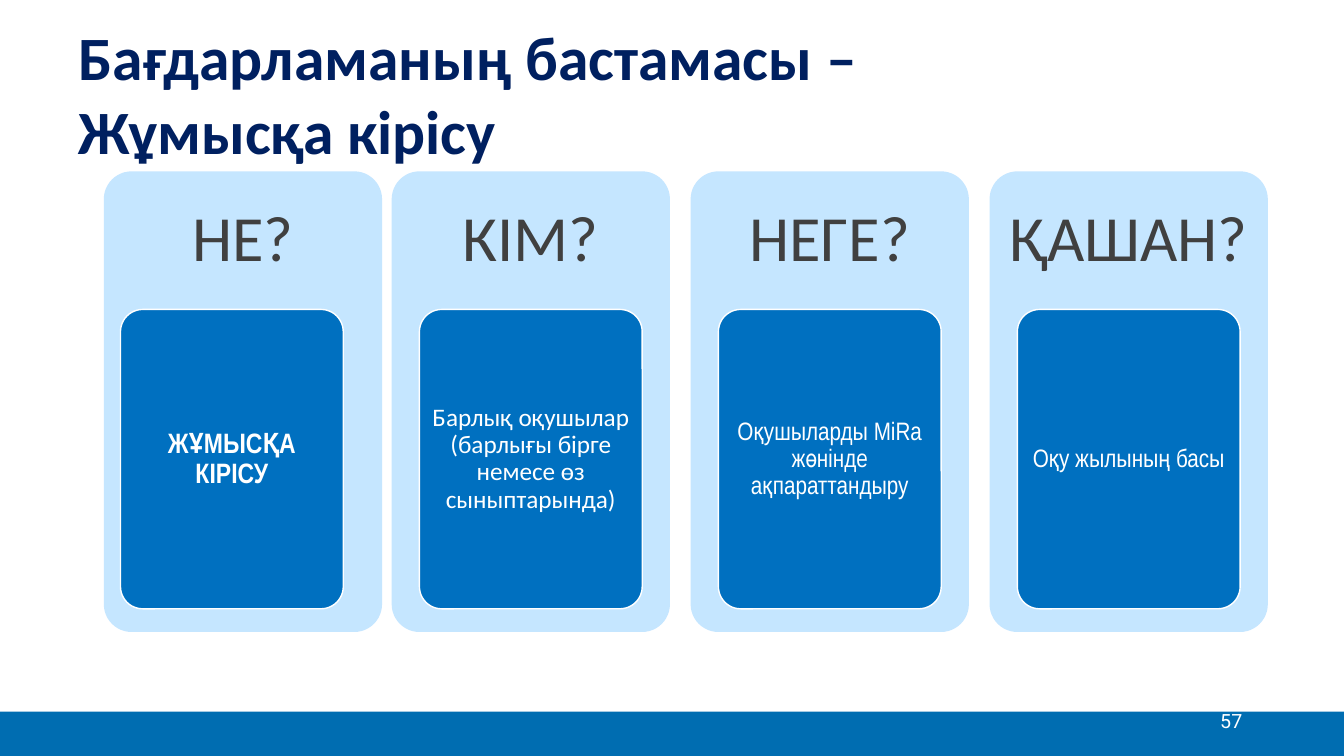
from pptx import Presentation
from pptx.dml.color import RGBColor
from pptx.enum.shapes import MSO_SHAPE as Shape
from pptx.enum.text import MSO_ANCHOR as Anchor, PP_ALIGN as Align
from pptx.util import Inches, Pt

WHITE = "FFFFFF"


def paint(shape, fill, line=None):
    shape.shadow.inherit = False
    shape.fill.solid()
    shape.fill.fore_color.rgb = RGBColor.from_string(fill)
    if line:
        shape.line.color.rgb = RGBColor.from_string(line)
        shape.line.width = Pt(1)
    else:
        shape.line.fill.background()
    return shape


def write(shape, text, size, color, font="Calibri", bold=False,
          align=Align.CENTER, spacing=0.9, inset=(0.1, 0.05)):
    """Fill a shape with one paragraph; inset is (sides, top and bottom) in inches."""
    frame = shape.text_frame
    frame.word_wrap = True
    frame.vertical_anchor = Anchor.MIDDLE
    frame.margin_left = frame.margin_right = Inches(inset[0])
    frame.margin_top = frame.margin_bottom = Inches(inset[1])
    paragraph = frame.paragraphs[0]
    paragraph.text = text
    paragraph.alignment = align
    paragraph.line_spacing = spacing
    for run in paragraph.runs:
        run.font.size = Pt(size)
        run.font.name = font
        run.font.bold = bold
        run.font.color.rgb = RGBColor.from_string(color)


prs = Presentation()
prs.slide_width, prs.slide_height = Inches(13.33), Inches(7.5)
slide = prs.slides.add_slide(prs.slide_layouts[6])
shapes = slide.shapes

footer_top = Inches(7.06)
paint(shapes.add_shape(Shape.RECTANGLE, 0, footer_top, prs.slide_width,
                       prs.slide_height - footer_top), "006DB1")

title = shapes.add_textbox(Inches(0.68), Inches(0.26), Inches(10.79), Inches(1.32))
write(title, "Бағдарламаның бастамасы –\vЖұмысқа кірісу", 44, "002060",
      bold=True, align=Align.LEFT, spacing=1)

# Question, answer, answer format, shift of the panel from its column
columns = [
    ("НЕ?", "ЖҰМЫСҚА КІРІСУ", dict(size=20, font="Arial Narrow", bold=True), 0.11),
    ("КІМ?", "Барлық оқушылар (барлығы бірге немесе өз сыныптарында)",
     dict(size=18), 0),
    ("НЕГЕ?", "Оқушыларды MiRa жөнінде ақпараттандыру",
     dict(size=18, font="Arial Narrow"), 0),
    ("ҚАШАН?", "Оқу жылының басы", dict(size=18, font="Arial Narrow"), 0),
]
first_left, pitch = 0.92, 2.965
panel_top, panel_width, panel_height = 1.7, 2.76, 4.57
heading_height = 1.37
card_width, card_height = 2.21, 2.97
card_indent = (panel_width - card_width) / 2

for index, (question, answer, answer_format, shift) in enumerate(columns):
    left = first_left + index * pitch
    panel = paint(shapes.add_shape(
        Shape.ROUNDED_RECTANGLE, Inches(left + shift), Inches(panel_top),
        Inches(panel_width), Inches(panel_height)), "C5E6FF")
    heading = shapes.add_textbox(Inches(left + shift), Inches(panel_top),
                                 Inches(panel_width), Inches(heading_height))
    write(heading, question, 46, "404040", inset=(0.19, 0.19))
    card = paint(shapes.add_shape(
        Shape.ROUNDED_RECTANGLE, Inches(left + card_indent),
        Inches(panel_top + heading_height),
        Inches(card_width), Inches(card_height)), "0070C0", WHITE)
    panel.adjustments[0] = card.adjustments[0] = 0.1
    write(card, answer, color=WHITE, inset=(0.05, 0.1), **answer_format)

page_number = shapes.add_textbox(Inches(9.42), Inches(6.95), Inches(3), Inches(0.4))
write(page_number, "57", 14, WHITE, font="Roboto", align=Align.RIGHT, spacing=1)

prs.save("out.pptx")
